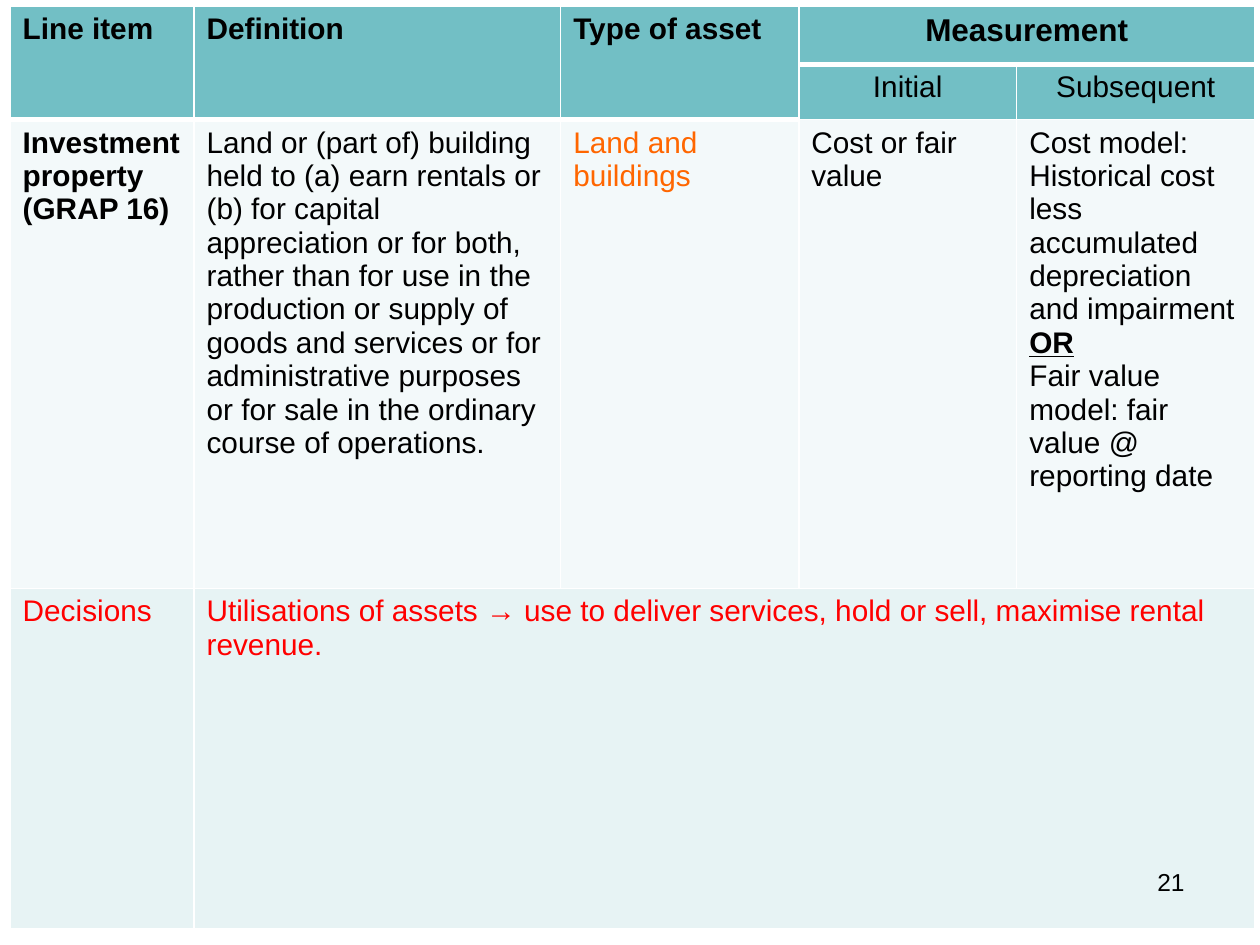
from dataclasses import dataclass

from lxml import etree
from pptx import Presentation
from pptx.dml.color import RGBColor
from pptx.enum.text import PP_ALIGN
from pptx.oxml.ns import qn
from pptx.util import Inches, Pt

LEFT, CENTER, RIGHT = PP_ALIGN.LEFT, PP_ALIGN.CENTER, PP_ALIGN.RIGHT
FONT = "Arial"
COLORS = {
    "header": "72BFC5",
    "body": "F3F9FA",
    "decision": "E7F3F4",
    "line": "FFFFFF",
    "text": "000000",
    "asset": "FF6600",
    "alert": "FF0000",
}
COLUMNS = [1.46, 2.91, 1.89, 1.73, 1.89]
ROWS = [0.46, 0.44, 3.72, 2.7]
ROW_FILLS = ["header", "header", "body", "decision"]
SPLIT_COLUMN = 3
THIN, THICK = 1, 3


@dataclass
class Entry:
    row: int
    col: int
    paragraphs: list[str]
    bold: bool = False
    color: str = "text"
    size: int = 17
    align: PP_ALIGN = LEFT
    rows: int = 1
    cols: int = 1
    emphasis: str = ""


ENTRIES = [
    Entry(0, 0, ["Line item"], bold=True, rows=2),
    Entry(0, 1, ["Definition"], bold=True, rows=2),
    Entry(0, 2, ["Type of asset"], bold=True, rows=2),
    Entry(0, 3, ["Measurement"], bold=True, size=18, align=CENTER, cols=2),
    Entry(1, 3, ["Initial"], align=CENTER),
    Entry(1, 4, ["Subsequent"], align=CENTER),
    Entry(2, 0, ["Investment property", "(GRAP 16)"], bold=True),
    Entry(2, 1, [
        "Land or (part of) building held to (a) earn rentals or (b) for capital "
        "appreciation or for both, rather than for use in the production or supply "
        "of goods and services or for administrative purposes or for sale in the "
        "ordinary course of operations."
    ]),
    Entry(2, 2, ["Land and buildings"], color="asset"),
    Entry(2, 3, ["Cost or fair value"]),
    Entry(2, 4, [
        "Cost model: Historical cost less accumulated depreciation and impairment OR",
        "Fair value model: fair value @ reporting date",
    ], emphasis="OR"),
    Entry(3, 0, ["Decisions"], color="alert"),
    Entry(3, 1, [
        "Utilisations of assets → use to deliver services, hold or sell, "
        "maximise rental revenue."
    ], color="alert", cols=4),
]


def rgb(name: str) -> RGBColor:
    return RGBColor.from_string(COLORS[name])


def format_paragraph(p, size: int, color: str, bold: bool, align: PP_ALIGN) -> None:
    p.alignment = align
    p.font.name = FONT
    p.font.size = Pt(size)
    p.font.bold = bold
    p.font.color.rgb = rgb(color)


def line_above(row: int, col: int) -> int:
    header_end = 1 if col >= SPLIT_COLUMN else 2
    return THICK if row == header_end else THIN


def add_borders(cell, row: int, col: int, rows: int) -> None:
    tc_pr = cell._tc.get_or_add_tcPr()
    widths = {"L": THIN, "R": THIN, "T": line_above(row, col),
              "B": line_above(row + rows, col)}
    for side, width in widths.items():
        ln = etree.SubElement(tc_pr, qn(f"a:ln{side}"), w=str(Pt(width)))
        fill = etree.SubElement(ln, qn("a:solidFill"))
        etree.SubElement(fill, qn("a:srgbClr"), val=COLORS["line"])


def fill_entry(table, entry: Entry) -> None:
    cell = table.cell(entry.row, entry.col)
    if entry.rows * entry.cols > 1:
        cell.merge(table.cell(entry.row + entry.rows - 1, entry.col + entry.cols - 1))
    add_borders(cell, entry.row, entry.col, entry.rows)
    cell.fill.solid()
    cell.fill.fore_color.rgb = rgb(ROW_FILLS[entry.row])
    tf = cell.text_frame
    for i, text in enumerate(entry.paragraphs):
        p = tf.paragraphs[0] if i == 0 else tf.add_paragraph()
        marked = bool(entry.emphasis) and text.endswith(entry.emphasis)
        p.add_run().text = text.removesuffix(entry.emphasis) if marked else text
        format_paragraph(p, entry.size, entry.color, entry.bold, entry.align)
        if marked:
            r = p.add_run()
            r.text = entry.emphasis
            r.font.bold = True
            r.font.underline = True


def add_asset_table(s) -> None:
    frame = s.shapes.add_table(len(ROWS), len(COLUMNS), Inches(0.08), Inches(0.05),
                               Inches(sum(COLUMNS)), Inches(sum(ROWS)))
    table = frame.table
    table.first_row = False
    table.horz_banding = False
    for column, width in zip(table.columns, COLUMNS):
        column.width = Inches(width)
    for row, height in zip(table.rows, ROWS):
        row.height = Inches(height)
    for entry in ENTRIES:
        fill_entry(table, entry)


def add_page_number(s, number: str) -> None:
    sp = s.shapes.add_textbox(Inches(7.17), Inches(6.83), Inches(2.33), Inches(0.52))
    tf = sp.text_frame
    tf.word_wrap = True
    p = tf.paragraphs[0]
    p.add_run().text = number
    format_paragraph(p, 14, "text", False, RIGHT)


def main() -> None:
    prs = Presentation()
    prs.slide_width, prs.slide_height = Inches(10), Inches(7.5)
    s = prs.slides.add_slide(prs.slide_layouts[6])
    add_asset_table(s)
    add_page_number(s, "21")
    prs.save("out.pptx")


if __name__ == "__main__":
    main()
